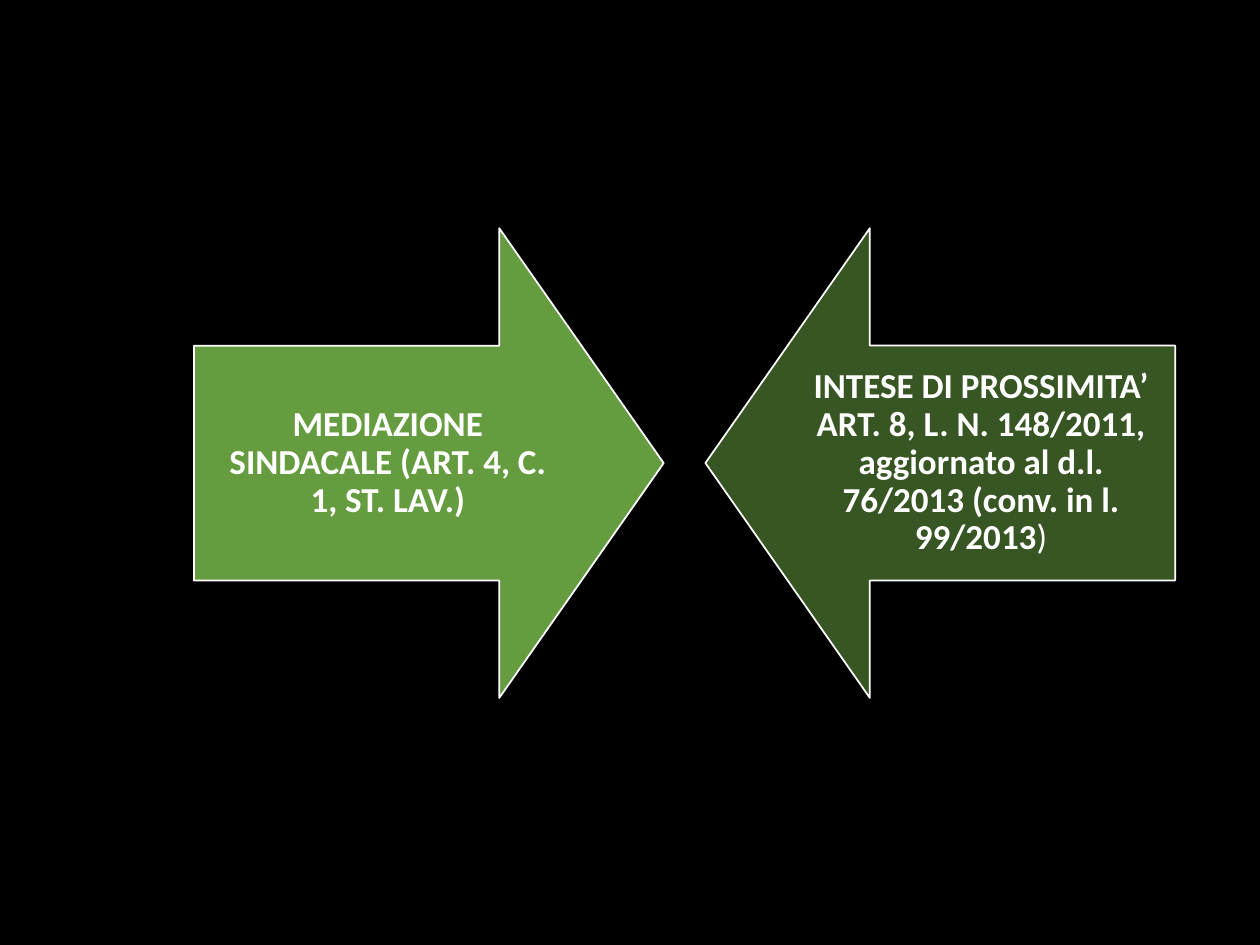
import pptx
import pptx.util
import pptx.dml.color
import pptx.enum.shapes
import pptx.enum.text
import pptx.oxml.ns
import lxml.etree
from pptx.util import Cm

RGB = pptx.dml.color.RGBColor.from_string
THEME = {
    "background": "000000", "arrow": "70AD47", "light": "FFFFFF",
    "font": "Calibri", "size": pptx.util.Pt(20), "line": pptx.util.Pt(1),
}

prs = pptx.Presentation()
prs.slide_width, prs.slide_height = Cm(25.4), Cm(19.05)
s = prs.slides.add_slide(prs.slide_layouts[6])
s.background.fill.solid()
s.background.fill.fore_color.rgb = RGB(THEME["background"])

# Arrow geometry: square arrows, labels as tall as the shaft
SIDE, TOP = Cm(9.47), Cm(4.6)
LABEL_W, LABEL_H = Cm(7.82), Cm(4.75)
LABEL_TOP = TOP + (SIDE - LABEL_H) // 2
INSET = Cm(0.41)

# Arrow left, label left, rotation, opacity in percent, runs (text, bold)
arrows = [
    (Cm(3.91), Cm(3.91), 270, 90,
     [("MEDIAZIONE SINDACALE (ART. 4, C. 1, ST. LAV.)", True)]),
    (Cm(14.22), Cm(14.22) + SIDE - LABEL_W, 90, 50,
     [("INTESE DI PROSSIMITA’ ART. 8, L. N. 148/2011, aggiornato al d.l. "
       "76/2013 (conv. in l. 99/2013", True), (")", False)]),
]

group = s.shapes.add_group_shape()
for left, label_left, rotation, opacity, runs in arrows:
    # Arrow
    sp = group.shapes.add_shape(
        pptx.enum.shapes.MSO_SHAPE.DOWN_ARROW, left, TOP, SIDE, SIDE)
    sp.rotation = rotation
    sp.adjustments[0], sp.adjustments[1] = 0.5, 0.35
    sp.shadow.inherit = False
    sp.fill.solid()
    sp.fill.fore_color.rgb = RGB(THEME["arrow"])
    color = sp.fill._xPr.find(".//" + pptx.oxml.ns.qn("a:srgbClr"))
    lxml.etree.SubElement(color, pptx.oxml.ns.qn("a:alpha"), val=str(opacity * 1000))
    sp.line.color.rgb = RGB(THEME["light"])
    sp.line.width = THEME["line"]

    # Label
    tf = group.shapes.add_textbox(label_left, LABEL_TOP, LABEL_W, LABEL_H).text_frame
    tf.word_wrap = True
    tf.vertical_anchor = pptx.enum.text.MSO_ANCHOR.MIDDLE
    tf.margin_left = tf.margin_right = tf.margin_top = tf.margin_bottom = INSET
    p = tf.paragraphs[0]
    p.alignment = pptx.enum.text.PP_ALIGN.CENTER
    p.line_spacing = 0.9
    p.space_after = pptx.util.Pt(7)
    for text, bold in runs:
        r = p.add_run()
        r.text = text
        r.font.name, r.font.size, r.font.bold = THEME["font"], THEME["size"], bold
        r.font.color.rgb = RGB(THEME["light"])

prs.save("out.pptx")
